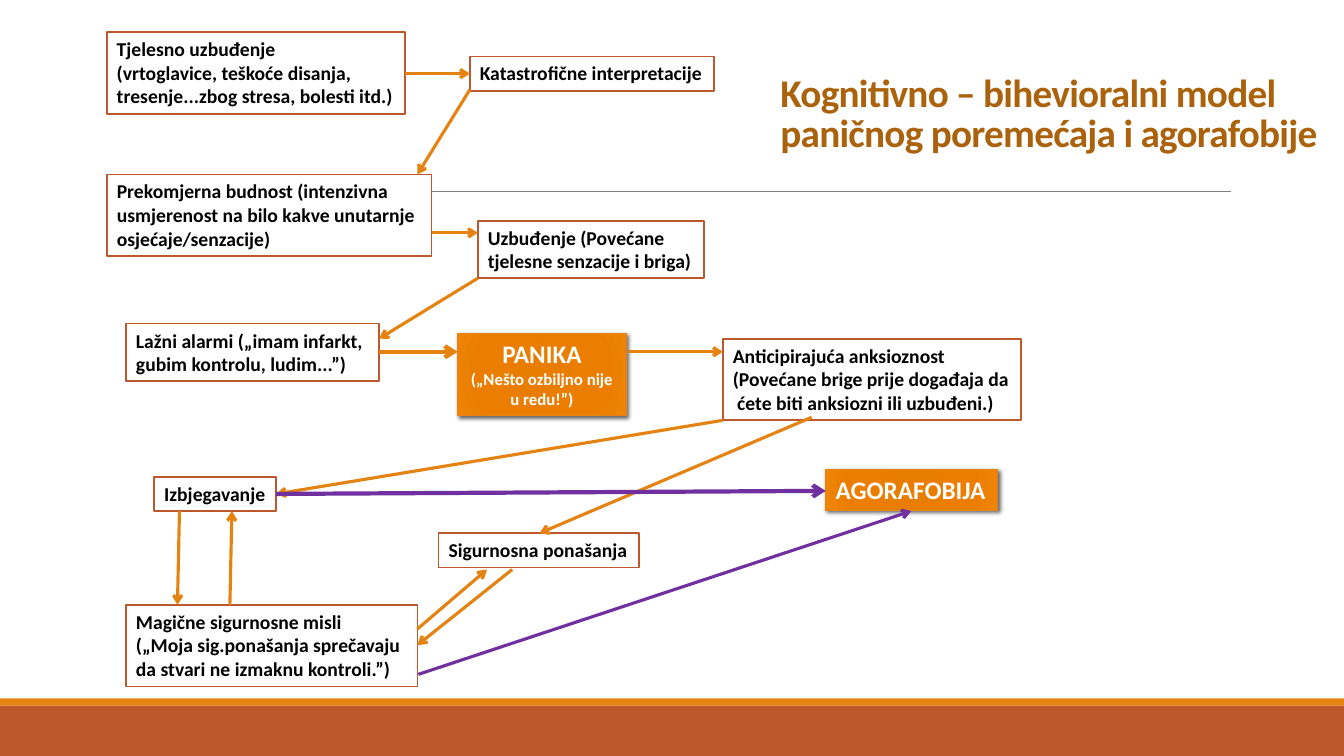
from pptx import Presentation
from pptx import util as u
from pptx.dml.color import RGBColor
from pptx.enum import shapes, text
from pptx.oxml import parse_xml
from pptx.oxml.ns import nsdecls, qn

PX = 9144
FONT = "Calibri"
HUES = {"title": "AB620D", "rust": "BD582C", "orange": "E48312", "violet": "7030A0",
        "gray": "808080", "white": "FFFFFF", "black": "000000"}
GLOW = [(0, "E57B00"), (34, "E87D00"), (70, "EB7E00"), (100, "EF8407")]

TITLE = ["Kognitivno – bihevioralni model", "paničnog poremećaja i agorafobije"]
BARS = [((0, 700, 1333, 50), "rust"), ((0, 693, 1333, 7), "orange")]
NOTES = [
    ((106, 32, 296, 81), ["Tjelesno uzbuđenje", "(vrtoglavice, teškoće disanja,",
                          "tresenje...zbog stresa, bolesti itd.)"]),
    ((466, 56, 242, 34), ["Katastrofične interpretacije"]),
    ((106, 173, 322, 81), ["Prekomjerna budnost (intenzivna",
                           "usmjerenost na bilo kakve unutarnje", "osjećaje/senzacije)"]),
    ((474, 219, 224, 57), ["Uzbuđenje (Povećane", "tjelesne senzacije i briga)"]),
    ((125, 321, 251, 57), ["Lažni alarmi („imam infarkt,", "gubim kontrolu, ludim...”)"]),
    ((717, 336, 296, 81), ["Anticipirajuća anksioznost", "(Povećane brige prije događaja da",
                           " ćete biti anksiozni ili uzbuđeni.)"]),
    ((153, 473, 121, 34), ["Izbjegavanje"]),
    ((435, 529, 199, 34), ["Sigurnosna ponašanja"]),
    ((125, 600, 289, 81), ["Magične sigurnosne misli", "(„Moja sig.ponašanja sprečavaju",
                           "da stvari ne izmaknu kontroli.”)"]),
]
ALERTS = [
    ((454, 331, 167, 81), [("PANIKA", 18), ("(„Nešto ozbiljno nije u redu!”)", 12)], True),
    ((819, 466, 170, 40), [("AGORAFOBIJA", 18)], False),
]
ARROWS = [
    ((402, 73, 466, 73), "orange", 2.25),
    ((466, 89, 414, 173), "orange", 2.25),
    ((428, 231, 474, 231), "orange", 2.25),
    ((474, 276, 376, 336), "orange", 2.25),
    ((376, 349, 454, 349), "orange", 3),
    ((623, 349, 717, 349), "orange", 2.25),
    ((717, 417, 274, 490), "orange", 2.25),
    ((805, 414, 535, 529), "orange", 2.25),
    ((274, 490, 819, 487), "violet", 3),
    ((178, 507, 176, 600), "orange", 2.25),
    ((228, 600, 230, 507), "orange", 2.25),
    ((414, 624, 483, 565), "orange", 2.25),
    ((508, 565, 414, 640), "orange", 2.25),
    ((415, 669, 904, 507), "violet", 2.25),
]


def emu(spot):
    return [v * PX for v in spot]


def hue(name):
    return RGBColor.from_string(HUES[name])


def add_run(para, line, size, tone):
    run = para.add_run()
    run.text = line
    font = run.font
    font.name, font.size, font.bold = FONT, u.Pt(size), True
    font.color.rgb = hue(tone)
    return run


def add_box(spot, fill, edge=None, width=1):
    box = slide.shapes.add_shape(shapes.MSO_SHAPE.RECTANGLE, *emu(spot))
    box.shadow.inherit = False
    box.fill.solid()
    box.fill.fore_color.rgb = hue(fill)
    if edge:
        box.line.color.rgb = hue(edge)
        box.line.width = u.Pt(width)
    else:
        box.line.fill.background()
    return box


def add_text(box, lines, tone, wrap, align):
    frame = box.text_frame
    frame.word_wrap = wrap
    frame.auto_size = text.MSO_AUTO_SIZE.SHAPE_TO_FIT_TEXT
    frame.vertical_anchor = text.MSO_ANCHOR.TOP
    for i, (line, size) in enumerate(lines):
        para = frame.add_paragraph() if i else frame.paragraphs[0]
        para.alignment = align
        add_run(para, line, size, tone)


def add_glow(box):
    props = box._element.spPr
    stops = "".join(f'<a:gs pos="{p * 1000}"><a:srgbClr val="{c}"/></a:gs>' for p, c in GLOW)
    grad = parse_xml(
        f'<a:gradFill {nsdecls("a")} rotWithShape="1"><a:gsLst>{stops}</a:gsLst>'
        '<a:path path="circle"><a:fillToRect l="100000" t="100000" r="100000" b="100000"/>'
        '</a:path></a:gradFill>')
    props.replace(props.find(qn("a:solidFill")), grad)
    shade = parse_xml(
        f'<a:outerShdw {nsdecls("a")} blurRad="{u.Pt(3)}" dist="{u.Pt(2)}" dir="2700000" '
        f'rotWithShape="0"><a:srgbClr val="{HUES["black"]}"><a:alpha val="60000"/>'
        '</a:srgbClr></a:outerShdw>')
    props.find(qn("a:effectLst")).append(shade)


def add_line(ends, tone, width, head=True):
    line = slide.shapes.add_connector(shapes.MSO_CONNECTOR.STRAIGHT, *emu(ends))
    line.line.color.rgb = hue(tone)
    line.line.width = u.Pt(width)
    if head:
        line.line._get_or_add_ln().append(
            parse_xml(f'<a:tailEnd {nsdecls("a")} type="arrow"/>'))
    line._element.spPr.append(parse_xml(f'<a:effectLst {nsdecls("a")}/>'))


deck = Presentation()
deck.slide_width, deck.slide_height = emu((1333, 750))
slide = deck.slides.add_slide(deck.slide_layouts[5])

for spot, tone in BARS:
    add_box(spot, tone)
add_line((131, 190, 1221, 190), "gray", 0.5, head=False)

title = slide.shapes.title
title.left, title.top, title.width, title.height = emu((764, 79, 553, 80))
frame = title.text_frame
frame.word_wrap = True
frame.auto_size = text.MSO_AUTO_SIZE.NONE
frame.vertical_anchor = text.MSO_ANCHOR.BOTTOM
para = frame.paragraphs[0]
para.alignment = text.PP_ALIGN.LEFT
para.line_spacing = 0.85
for i, line in enumerate(TITLE):
    if i:
        para.add_line_break()
    run = add_run(para, line, 28, "title")
    run.font._element.set("spc", "-50")

for spot, lines in NOTES:
    box = add_box(spot, "white", "rust", 1.25)
    add_text(box, [(line, 14) for line in lines], "black", False, text.PP_ALIGN.LEFT)

for spot, lines, wrap in ALERTS:
    box = add_box(spot, "orange", "orange")
    add_glow(box)
    add_text(box, lines, "white", wrap, text.PP_ALIGN.CENTER if wrap else text.PP_ALIGN.LEFT)

for ends, tone, width in ARROWS:
    add_line(ends, tone, width)

deck.save("out.pptx")
